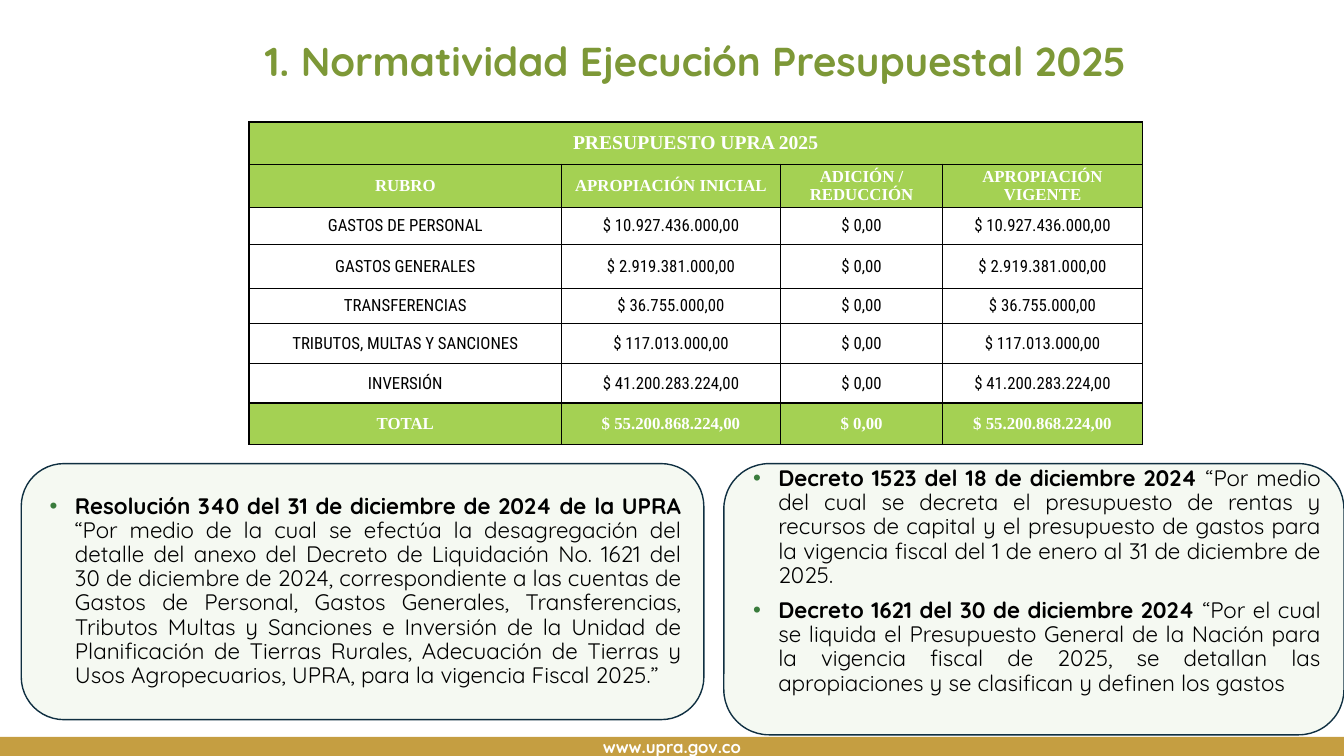
"""Build the slide on the 2025 budget rules."""
from dataclasses import dataclass

from lxml import etree
from pptx import Presentation
from pptx.dml.color import RGBColor
from pptx.enum.shapes import MSO_SHAPE
from pptx.enum.text import MSO_ANCHOR, PP_ALIGN
from pptx.oxml.ns import qn
from pptx.util import Inches, Pt

RECT, ROUND = MSO_SHAPE.RECTANGLE, MSO_SHAPE.ROUNDED_RECTANGLE
MIDDLE, TOP = MSO_ANCHOR.MIDDLE, MSO_ANCHOR.TOP
CENTER, JUSTIFY = PP_ALIGN.CENTER, PP_ALIGN.JUSTIFY
WIDE, HIGH = Inches(13.33), Inches(7.5)


@dataclass(frozen=True)
class Theme:
    """Colours, fonts and type sizes."""
    white: str = "FFFFFF"
    black: str = "000000"
    gold: str = "C59E41"
    olive: str = "7D9837"
    lime: str = "A4D153"
    mint: str = "E2F0D9"
    navy: str = "0F2F41"
    leaf: str = "397C3C"
    sans: str = "Quicksand"
    serif: str = "Times New Roman"
    slim: str = "Roboto Condensed"
    title: float = 28.8
    body: float = 16
    head: float = 14
    cell: float = 12


@dataclass(frozen=True)
class Area:
    """Place and size in percent of the slide."""
    x: float
    y: float
    w: float
    h: float

    def box(self) -> tuple:
        return across(self.x), down(self.y), across(self.w), down(self.h)


@dataclass(frozen=True)
class Card:
    """Rounded panel with bulleted rules."""
    area: Area
    rules: tuple
    foot: float


@dataclass(frozen=True)
class Row:
    """Table row with its height in percent."""
    high: float
    cells: tuple
    band: bool = False


THEME = Theme()
COLS = (23.26, 16.28, 12.08, 14.85)
GRID = Area(18.53, 16.13, 66.46, 42.67)
CARDS = (
    Card(Area(53.86, 61.33, 46.14, 35.87), (
        (("Decreto 1523 del 18 de diciembre 2024 ", True),
         ("“Por medio del cual se decreta el presupuesto de rentas y recursos de capital "
          "y el presupuesto de gastos para la vigencia fiscal del 1 de enero al 31 de "
          "diciembre de 2025.", False)),
        (("Decreto 1621 del 30 de diciembre 2024 ", True),
         ("“Por el cual se liquida el Presupuesto General de la Nación para la vigencia "
          "fiscal de 2025, se detallan las apropiaciones y se clasifican y definen los "
          "gastos", False))), 5.33),
    Card(Area(1.58, 61.33, 50.79, 33.87), (
        (("Resolución 340 del 31 de diciembre de 2024 de la UPRA ", True),
         ("“Por medio de la cual se efectúa la desagregación del detalle del anexo del "
          "Decreto de Liquidación No. 1621 del 30 de diciembre de 2024, correspondiente a "
          "las cuentas de Gastos de Personal, Gastos Generales, Transferencias, Tributos "
          "Multas y Sanciones e Inversión de la Unidad de Planificación de Tierras Rurales, "
          "Adecuación de Tierras y Usos Agropecuarios, UPRA, para la vigencia Fiscal "
          "2025.”", False)),), 0.67),
)


def entry(high: float, name: str, sum: str, band: bool = False) -> Row:
    return Row(high, (name, sum, "$ 0,00", sum), band)


ROWS = (
    Row(5.6, ("PRESUPUESTO UPRA 2025",), True),
    Row(5.73, ("RUBRO", "APROPIACIÓN INICIAL", "ADICIÓN / REDUCCIÓN",
               "APROPIACIÓN VIGENTE"), True),
    entry(4.93, "GASTOS DE PERSONAL", "$ 10.927.436.000,00"),
    entry(5.73, "GASTOS GENERALES", "$ 2.919.381.000,00"),
    entry(4.67, "TRANSFERENCIAS", "$ 36.755.000,00"),
    entry(5.33, "TRIBUTOS, MULTAS Y SANCIONES", "$ 117.013.000,00"),
    entry(5.2, "INVERSIÓN", "$ 41.200.283.224,00"),
    entry(5.47, "TOTAL", "$ 55.200.868.224,00", True),
)


def across(share: float) -> int:
    return round(WIDE * share / 100)


def down(share: float) -> int:
    return round(HIGH * share / 100)


def tint(code: str) -> RGBColor:
    return RGBColor.from_string(code)


def write(frame, paras: tuple, *, size: float, font: str, color: str,
          align=CENTER, space: float = 1, after: float = 0, dot: str = "") -> None:
    """Write paragraphs made of (text, bold) runs."""
    frame.word_wrap = True
    for i, runs in enumerate(paras):
        para = frame.paragraphs[0] if i == 0 else frame.add_paragraph()
        if dot:
            props = para._p.get_or_add_pPr()
            props.set("marL", str(across(2.33)))
            props.set("indent", str(-across(1.88)))
            hue = etree.SubElement(props, qn("a:buClr"))
            etree.SubElement(hue, qn("a:srgbClr"), val=dot)
            etree.SubElement(props, qn("a:buFont"), typeface="Arial")
            etree.SubElement(props, qn("a:buChar"), char="•")
        para.alignment, para.line_spacing = align, space
        para.space_after = Pt(after)
        for words, bold in runs:
            run = para.add_run()
            run.text = words
            run.font.size, run.font.name, run.font.bold = Pt(size), font, bold
            run.font.color.rgb = tint(color)


def panel(slide, kind, area: Area, fill: str):
    """Add a plain filled shape."""
    shape = slide.shapes.add_shape(kind, *area.box())
    shape.shadow.inherit = False
    shape.fill.solid()
    shape.fill.fore_color.rgb = tint(fill)
    shape.line.fill.background()
    shape.text_frame.vertical_anchor = MIDDLE
    return shape


def draw_card(slide, card: Card) -> None:
    """Draw one panel of rules."""
    shape = panel(slide, ROUND, card.area, THEME.mint)
    hue = shape._element.spPr.find(".//" + qn("a:srgbClr"))
    etree.SubElement(hue, qn("a:alpha"), val="34000")
    shape.line.color.rgb, shape.line.width = tint(THEME.navy), Pt(1)
    shape.text_frame.margin_bottom = down(card.foot)
    write(shape.text_frame, card.rules, size=THEME.body, font=THEME.sans,
          color=THEME.black, align=JUSTIFY, space=0.9, after=8, dot=THEME.leaf)


def style(cell, band: bool) -> None:
    """Set margins, borders and fill of a cell."""
    cell.margin_left = cell.margin_right = cell.margin_top = cell.margin_bottom = 0
    cell.vertical_anchor = MIDDLE
    props = cell._tc.get_or_add_tcPr()
    for side in ("a:lnL", "a:lnR", "a:lnT", "a:lnB"):
        line = etree.SubElement(props, qn(side), w=str(Pt(1)))
        solid = etree.SubElement(line, qn("a:solidFill"))
        etree.SubElement(solid, qn("a:srgbClr"), val=THEME.black)
    if band:
        cell.fill.solid()
        cell.fill.fore_color.rgb = tint(THEME.lime)
    else:
        cell.fill.background()


def draw_grid(slide) -> None:
    """Draw the budget table."""
    table = slide.shapes.add_table(len(ROWS), len(COLS), *GRID.box()).table
    table.first_row = table.horz_banding = False
    for col, wide in zip(table.columns, COLS):
        col.width = across(wide)
    for i, row in enumerate(ROWS):
        table.rows[i].height = down(row.high)
        for cell in table.rows[i].cells:
            style(cell, row.band)
        for j, words in enumerate(row.cells):
            write(table.cell(i, j).text_frame, (((words, row.band),),),
                  size=THEME.cell if i else THEME.head,
                  font=THEME.serif if row.band else THEME.slim,
                  color=THEME.white if row.band else THEME.black)
    table.cell(0, 0).merge(table.cell(0, len(COLS) - 1))


def main() -> None:
    deck = Presentation()
    deck.slide_width, deck.slide_height = WIDE, HIGH
    slide = deck.slides.add_slide(deck.slide_layouts[6])
    foot = panel(slide, RECT, Area(0, 97.47, 100, 2.53), THEME.gold).text_frame
    foot.margin_top = foot.margin_bottom = 0
    write(foot, ((("www.upra.gov.co", True),),), size=THEME.cell,
          font=THEME.sans, color=THEME.white)
    title = slide.shapes.add_textbox(*Area(16.58, 4.8, 70.37, 13.73).box()).text_frame
    title.vertical_anchor = TOP
    write(title, ((("1. Normatividad Ejecución Presupuestal 2025", True),),),
          size=THEME.title, font=THEME.sans, color=THEME.olive, space=0.9)
    for card in CARDS:
        draw_card(slide, card)
    draw_grid(slide)
    deck.save("out.pptx")


if __name__ == "__main__":
    main()
